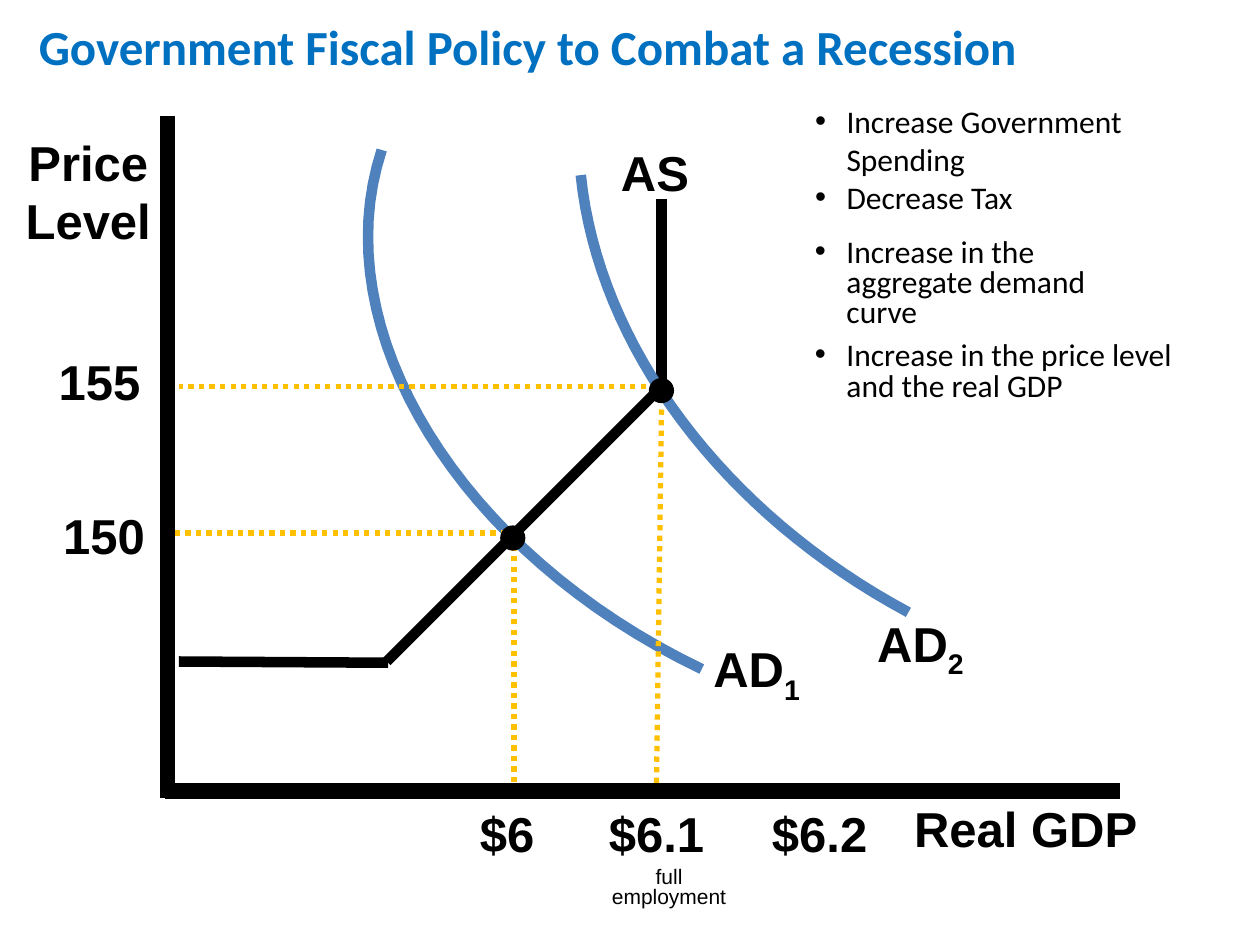
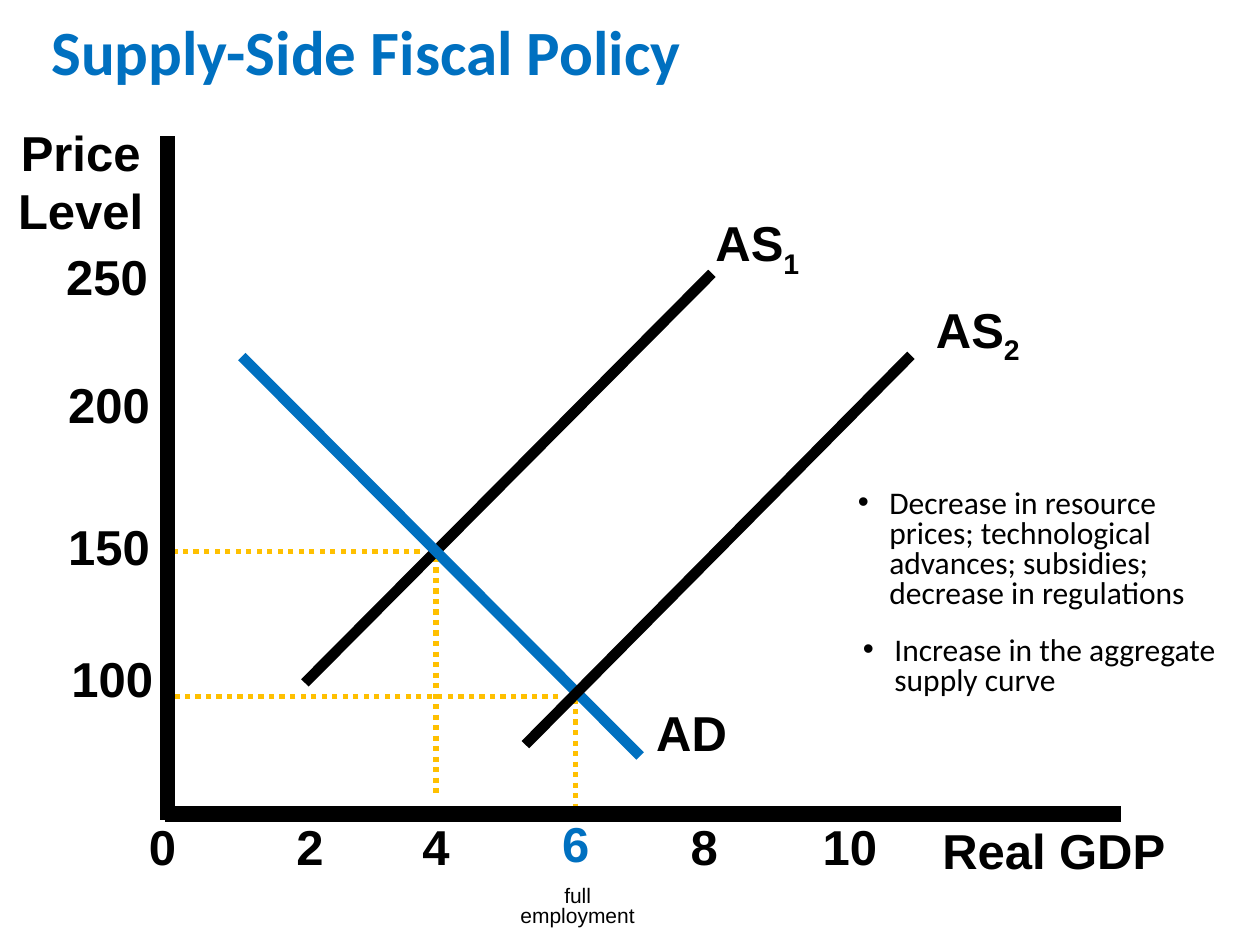
from collections import namedtuple

from lxml import etree
from pptx import Presentation
from pptx.dml.color import RGBColor
from pptx.enum.dml import MSO_LINE
from pptx.enum.shapes import MSO_CONNECTOR, MSO_SHAPE
from pptx.enum.text import PP_ALIGN
from pptx.oxml.ns import qn
from pptx.util import Inches, Pt

COLORS = {"ink": "000000", "paper": "FFFFFF", "accent": "0070C0",
          "demand": "4F81BD", "guide": "FFC000"}
CURVE_STEPS = 32
DOT_SIZE = 0.2

Box = namedtuple("Box", "x y w h")


def rgb(name):
    return RGBColor.from_string(COLORS[name])


def inside(box, x, y, w, h):
    return Box(box.x + x, box.y + y, w, h)


def add_text(s, box):
    sp = s.shapes.add_textbox(*map(Inches, box))
    sp.text_frame.word_wrap = True
    return sp


def style(p, size, font="Arial", color="ink", bold=False, spacing=None):
    p.font.size = Pt(size)
    p.font.name = font
    p.font.color.rgb = rgb(color)
    p.font.bold = bold
    p.line_spacing = spacing


def add_title(s, box, text, size):
    sp = add_text(s, box)
    sp.fill.solid()
    sp.fill.fore_color.rgb = rgb("paper")
    p = sp.text_frame.paragraphs[0]
    p.text = text
    style(p, size, "Calibri", "accent", True)


def add_label(s, plot, text, x, y, w, h=0.48, color="ink", size=28,
              bold=True, spacing=0.8, align=PP_ALIGN.CENTER):
    p = add_text(s, inside(plot, x, y, w, h)).text_frame.paragraphs[0]
    base, _, sub = text.partition("_")
    p.add_run().text = base
    if sub:
        r = p.add_run()
        r.text = sub
        r._r.get_or_add_rPr().set("baseline", "-25000")
    p.alignment = align
    style(p, size, color=color, bold=bold, spacing=spacing)


def add_curve_name(s, plot, text, x, y, w):
    add_label(s, plot, text, x, y, w, 0.53, spacing=None, align=PP_ALIGN.LEFT)


def add_price_level(s, plot, x, y):
    add_label(s, plot, "Price Level", x, y, 1.62, 1.04, spacing=None)


def add_full_employment(s, plot, x, y, w):
    add_label(s, plot, "full employment", x, y, w, 0.42, size=12, bold=False)


def add_line(s, plot, x1, y1, x2, y2, color="ink", width=6):
    ends = (plot.x + x1, plot.y + y1, plot.x + x2, plot.y + y2)
    cx = s.shapes.add_connector(MSO_CONNECTOR.STRAIGHT, *map(Inches, ends))
    cx.line.color.rgb = rgb(color)
    cx.line.width = Pt(width)
    etree.SubElement(cx._element.spPr, qn("a:effectLst"))
    return cx


def add_guides(s, plot, guides):
    for ends in guides:
        add_line(s, plot, *ends, "guide", 3).line.dash_style = MSO_LINE.ROUND_DOT


def add_axes(s, plot):
    add_line(s, plot, 0, 0, 0, plot.h + 0.05, width=9)
    add_line(s, plot, -0.02, plot.h, plot.w, plot.h, width=9)


def add_demand_curve(s, plot, controls):
    def point(t):
        weights = ((1 - t) ** 3, 3 * t * (1 - t) ** 2, 3 * t * t * (1 - t), t ** 3)
        x, y = (sum(w * c for w, c in zip(weights, axis)) for axis in zip(*controls))
        return Inches(plot.x + x), Inches(plot.y + y)

    points = [point(i / CURVE_STEPS) for i in range(CURVE_STEPS + 1)]
    fb = s.shapes.build_freeform(*points[0])
    fb.add_line_segments(points[1:], close=False)
    sp = fb.convert_to_shape()
    sp.shadow.inherit = False
    sp.fill.background()
    sp.line.color.rgb = rgb("demand")
    sp.line.width = Pt(6)


def add_dot(s, plot, x, y):
    corner = inside(plot, x - DOT_SIZE / 2, y - DOT_SIZE / 2, DOT_SIZE, DOT_SIZE)
    sp = s.shapes.add_shape(MSO_SHAPE.OVAL, *map(Inches, corner))
    sp.shadow.inherit = False
    sp.fill.solid()
    sp.fill.fore_color.rgb = rgb("ink")
    sp.line.fill.background()


def add_bullets(s, box, items, spacing=0.8):
    tf = add_text(s, box).text_frame
    for i, item in enumerate(items):
        p = tf.add_paragraph() if i else tf.paragraphs[0]
        p.text = item
        style(p, 18, "Calibri", spacing=spacing)
        pPr = p._p.get_or_add_pPr()
        pPr.set("marL", str(Inches(0.25)))
        pPr.set("indent", str(-Inches(0.25)))
        bullet_font = etree.Element(qn("a:buFont"), typeface="Arial")
        bullet = etree.Element(qn("a:buChar"), char="•")
        at = pPr.index(pPr.find(qn("a:defRPr")))
        pPr[at:at] = [bullet_font, bullet]


def draw_recession_plot(s, plot):
    add_demand_curve(s, plot, [(4.24, 4.39), (2.32, 3.47), (1.23, 1.7), (1.7, 0.27)])
    add_guides(s, plot, [(2.77, 3.31, 0, 3.31), (3.88, 2.15, 0.09, 2.15)])
    for supply in [(3.92, 2.16, 3.92, 0.66), (1.75, 4.34, 0.09, 4.33),
                   (3.92, 2.15, 1.74, 4.33)]:
        add_line(s, plot, *supply)
    add_guides(s, plot, [(2.75, 3.41, 2.75, 5.33), (3.92, 2.33, 3.88, 5.33)])
    add_axes(s, plot)
    add_demand_curve(s, plot, [(5.88, 3.94), (4.41, 3.15), (3.42, 1.83), (3.28, 0.47)])
    for center in [(3.92, 2.18), (2.74, 3.35)]:
        add_dot(s, plot, *center)

    for text, x, w in [("$6", 2.25, 0.89), ("$6.1", 3.34, 1.08), ("$6.2", 4.34, 1.67)]:
        add_label(s, plot, text, x, 5.5, w)
    for text, x, y, w in [("155", -1.08, 1.91, 1.08), ("150", -1.13, 3.13, 1.25),
                          ("AD_1", 4.05, 4.15, 1.25), ("AD_2", 5.35, 3.95, 1.25)]:
        add_label(s, plot, text, x, y, w)
    add_curve_name(s, plot, "AS", 3.5, 0.16, 1)
    add_label(s, plot, "Real GDP", 5.77, 5.37, 2.08, 0.52, spacing=None)
    add_price_level(s, plot, -1.44, 0.08)
    add_full_employment(s, plot, 3.42, 5.92, 1.12)


def draw_supply_plot(s, plot):
    add_guides(s, plot, [(3.24, 4.38, 3.24, 5.38), (2.13, 3.34, 2.13, 5.25)])
    add_line(s, plot, 4.32, 1.09, 1.09, 4.34)
    add_line(s, plot, 0.59, 1.75, 3.75, 4.92, "accent")
    add_guides(s, plot, [(2, 3.3, -0.08, 3.3), (3.1, 4.45, 0, 4.45)])
    add_line(s, plot, 5.9, 1.74, 2.84, 4.83)
    add_axes(s, plot)

    for text, x in [("0", -0.33), ("2", 0.84), ("4", 1.84), ("8", 3.97)]:
        add_label(s, plot, text, x, 5.44, 0.58)
    add_label(s, plot, "6", 2.95, 5.42, 0.58, color="accent")
    add_label(s, plot, "10", 5, 5.44, 0.83)
    for text, x, y, w in [("250", -1.25, 0.92, 1.54), ("200", -1.09, 1.93, 1.25),
                          ("150", -1.1, 3.06, 1.27), ("100", -1.08, 4.11, 1.28)]:
        add_label(s, plot, text, x, y, w)
    for text, x, y, w in [("AS_1", 4.25, 0.56, 1.23), ("AS_2", 6, 1.25, 1.08),
                          ("AD", 3.78, 4.45, 1), ("Real GDP", 6.05, 5.38, 2.42)]:
        add_curve_name(s, plot, text, x, y, w)
    add_price_level(s, plot, -1.5, -0.16)
    add_full_employment(s, plot, 2.67, 5.91, 1.17)


def build_recession_slide(s):
    draw_recession_plot(s, Box(1.33, 0.92, 7.56, 5.36))
    add_title(s, Box(0.21, 0.08, 9.54, 0.57),
              "Government Fiscal Policy to Combat a Recession", 28)
    add_bullets(s, Box(6.37, 0.76, 3.55, 1.01),
                ["Increase Government Spending", "Decrease Tax"], None)
    add_bullets(s, Box(6.37, 1.85, 2.56, 0.83),
                ["Increase in the aggregate demand curve"])
    add_bullets(s, Box(6.37, 2.67, 3.06, 0.59),
                ["Increase in the price level and the real GDP"])


def build_supply_slide(s):
    draw_supply_plot(s, Box(1.33, 1.08, 7.57, 5.38))
    add_title(s, Box(0.31, 0.05, 7.08, 0.71), "Supply-Side Fiscal Policy", 36)
    add_bullets(s, Box(6.71, 3.84, 3.12, 1.07),
                ["Decrease in resource prices; technological advances; "
                 "subsidies; decrease in regulations"])
    add_bullets(s, Box(6.75, 5.01, 3.08, 0.59),
                ["Increase in the aggregate supply curve"])


def main():
    prs = Presentation()
    prs.slide_width, prs.slide_height = Inches(10), Inches(7.5)
    for build in (build_recession_slide, build_supply_slide):
        build(prs.slides.add_slide(prs.slide_layouts[6]))
    prs.save("out.pptx")


if __name__ == "__main__":
    main()
